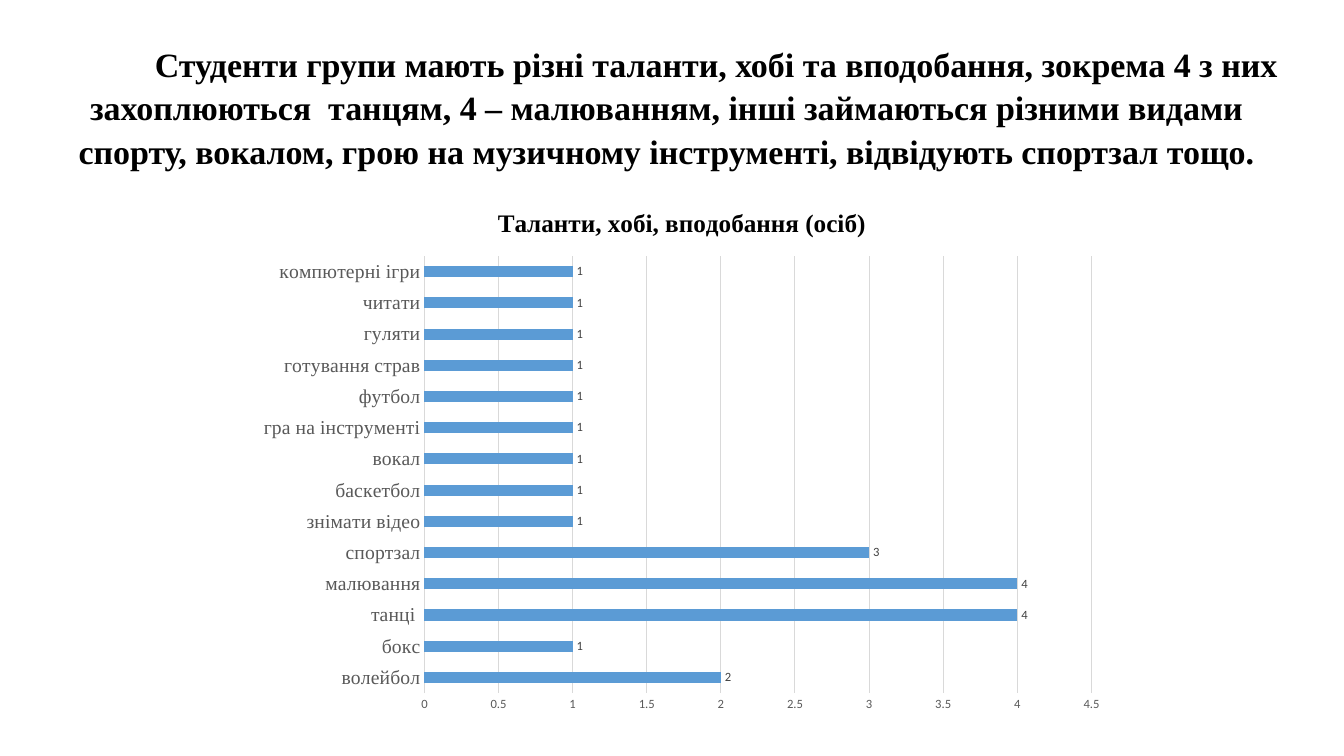
from lxml import etree
from pptx import Presentation
from pptx.chart.data import CategoryChartData
from pptx.dml.color import RGBColor
from pptx.enum.chart import XL_CHART_TYPE, XL_LABEL_POSITION, XL_TICK_MARK
from pptx.enum.text import MSO_ANCHOR, MSO_AUTO_SIZE, PP_ALIGN
from pptx.oxml.ns import qn
from pptx.util import Pt

BAR = XL_CHART_TYPE.BAR_CLUSTERED
OUTSIDE = XL_LABEL_POSITION.OUTSIDE_END
NO_TICK = XL_TICK_MARK.NONE
TOP = MSO_ANCHOR.TOP
NO_FIT = MSO_AUTO_SIZE.NONE
CENTER = PP_ALIGN.CENTER

BLACK = RGBColor(0x00, 0x00, 0x00)
DARK = RGBColor(0x40, 0x40, 0x40)
GRAY = RGBColor(0x59, 0x59, 0x59)
LIGHT = RGBColor(0xD9, 0xD9, 0xD9)
BLUE = RGBColor(0x5B, 0x9B, 0xD5)
SERIF, SANS = "Times New Roman", "Calibri"

TITLE = ("Студенти групи мають різні таланти, хобі та вподобання, зокрема 4 з них "
         "захоплюються  танцям, 4 – малюванням, інші займаються різними видами "
         "спорту, вокалом, грою на музичному інструменті, відвідують спортзал тощо.")
CHART_TITLE = "Таланти, хобі, вподобання (осіб)"
HOBBIES = {
    "волейбол": 2, "бокс": 1, "танці ": 4, "малювання": 4, "спортзал": 3,
    "знімати відео": 1, "баскетбол": 1, "вокал": 1, "гра на інструменті": 1,
    "футбол": 1, "готування страв": 1, "гуляти": 1, "читати": 1,
    "компютерні ігри": 1,
}


def style(font, size=10, color=BLACK, name=SANS, bold=False):
    font.size, font.name, font.bold = Pt(size), name, bold
    font.color.rgb = color


def add_text(p, text, **fmt):
    r = p.add_run()
    r.text = text
    style(r.font, **fmt)


def set_layout(parent, index, **parts):
    layout = parent.find(qn("c:layout"))
    if layout is None:
        layout = etree.Element(qn("c:layout"))
        parent.insert(index, layout)
    manual = etree.SubElement(layout, qn("c:manualLayout"))
    for tag, val in parts.items():
        etree.SubElement(manual, qn("c:" + tag)).set("val", str(val))


class Deck:
    """Holds the presentation, its style and the current slide."""

    def __init__(self):
        self.prs = Presentation()
        self.prs.slide_width, self.prs.slide_height = Pt(960), Pt(540)

    def add_slide(self):
        self.s = self.prs.slides.add_slide(self.prs.slide_layouts[5])

    def title(self, text, x, y, w, h, indent):
        sp = self.s.shapes.title
        sp.left, sp.top, sp.width, sp.height = map(Pt, (x, y, w, h))
        tf = sp.text_frame
        tf.word_wrap, tf.auto_size, tf.vertical_anchor = True, NO_FIT, TOP
        tf.margin_top = 0
        p = tf.paragraphs[0]
        p.alignment, p.line_spacing, p.space_after = CENTER, 1.07, Pt(8)
        p._p.get_or_add_pPr().set("indent", str(Pt(indent)))
        add_text(p, text, size=24.3, name=SERIF, bold=True)

    def bar_chart(self, title, values, x, y, w, h):
        data = CategoryChartData()
        data.categories = list(values)
        data.add_series("Series 1", list(values.values()))
        frame = self.s.shapes.add_chart(BAR, Pt(x), Pt(y), Pt(w), Pt(h), data)
        chart = frame.chart
        style(chart.font)
        chart.has_legend = False
        chart.has_title = True
        add_text(chart.chart_title.text_frame.paragraphs[0], title,
                 size=18, name=SERIF, bold=True)
        set_layout(chart.chart_title._element, 1,
                   xMode="edge", yMode="edge", x=0.284, y=0.03)
        plot = chart.plots[0]
        plot.gap_width, plot.vary_by_categories = 182, False
        set_layout(plot._element.getparent(), 0, layoutTarget="inner",
                   xMode="edge", yMode="edge", x=0.205, y=0.13, w=0.766, h=0.815)
        fill = plot.series[0].format.fill
        fill.solid()
        fill.fore_color.rgb = BLUE
        plot.has_data_labels = True
        labels = plot.data_labels
        labels.show_value, labels.position = True, OUTSIDE
        style(labels.font, size=9, color=DARK)
        self.axes(chart.category_axis, chart.value_axis)

    def axes(self, cat, val):
        for axis in (cat, val):
            axis.major_tick_mark = axis.minor_tick_mark = NO_TICK
        style(cat.tick_labels.font, size=14, color=GRAY, name=SERIF)
        style(val.tick_labels.font, size=9, color=GRAY)
        val.minimum_scale, val.maximum_scale, val.major_unit = 0, 4.5, 0.5
        val.has_major_gridlines = True
        val.format.line.fill.background()
        for line in (cat.format.line, val.major_gridlines.format.line):
            line.color.rgb, line.width = LIGHT, Pt(0.75)


def main():
    deck = Deck()
    deck.add_slide()
    deck.title(TITLE, 18.7, 28.8, 915, 104.4, indent=71)
    deck.bar_chart(CHART_TITLE, HOBBIES, 175.7, 133.2, 622, 383)
    deck.prs.save("out.pptx")


if __name__ == "__main__":
    main()
